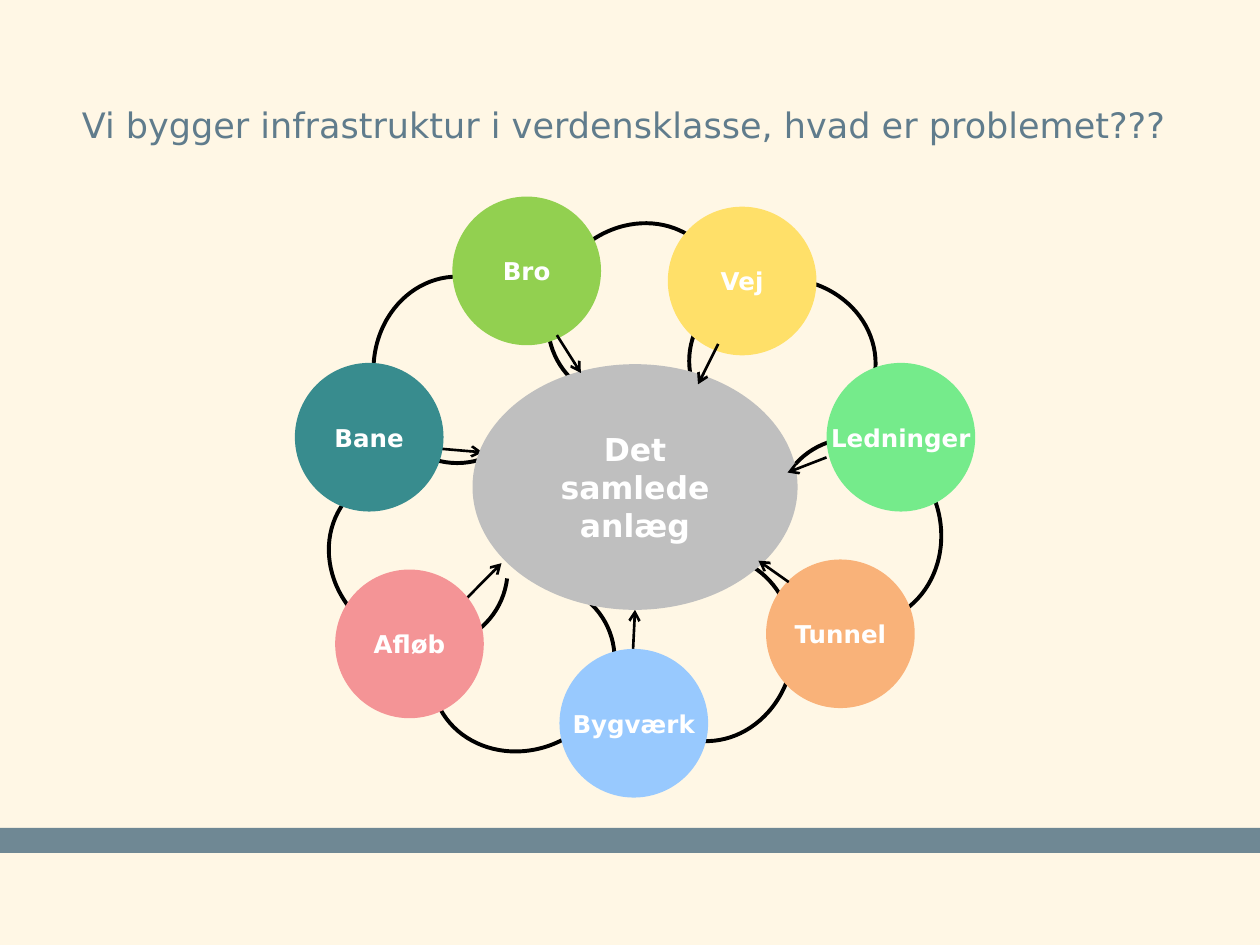
from dataclasses import dataclass

from lxml.etree import SubElement
from pptx import Presentation
from pptx.dml.color import RGBColor
from pptx.enum.shapes import MSO_CONNECTOR as Connector, MSO_SHAPE as Shape
from pptx.enum.text import MSO_ANCHOR as Anchor, PP_ALIGN as Align
from pptx.oxml.ns import qn
from pptx.util import Inches, Pt

COLUMNS, ROWS = 100, 75
FONT = "DejaVu Sans"
COLORS = {
    "background": "FFF7E5",
    "slate": "607C8C",
    "line": "000000",
    "label": "FFFFFF",
    "hub": "BFBFBF",
    "bridge": "92D050",
    "road": "FFE069",
    "cables": "75EB8B",
    "tunnel": "F9B279",
    "structure": "98C9FE",
    "drain": "F49496",
    "rail": "388C8E",
}
DISC = 11.8
ARC_WIDTH, ARC_HEIGHT = 14.8, 13.3
ARC_START, ARC_END = 152.6, 7.1
ADJUSTMENT_PER_DEGREE = 0.6


@dataclass(frozen=True)
class Discipline:
    """A disc, the arc leading on to its clockwise neighbour, and its arrow to the hub."""
    label: str
    color: str
    corner: tuple[float, float]
    arc_corner: tuple[float, float]
    arc_turn: float
    arrow_start: tuple[float, float]
    arrow_end: tuple[float, float]
    arrow_behind: bool = False


DISCIPLINES = [
    Discipline("Bro", "bridge", (35.9, 15.6), (43.1, 18.1), 314.9, (44.2, 26.6), (46.1, 29.6)),
    Discipline("Vej", "road", (53, 16.4), (54.7, 22.1), 4.1, (57, 27.3), (55.4, 30.5)),
    Discipline("Ledninger", "cables", (65.6, 28.8), (60.6, 35.5), 75.2, (65.6, 36.3), (62.5, 37.5)),
    Discipline("Tunnel", "tunnel", (60.8, 44.4), (48.9, 44.8), 100.6, (62.6, 46.2), (60.2, 44.5)),
    Discipline("Bygværk", "structure", (44.4, 51.5), (34.1, 46.2), 155.4, (49.7, 62.5), (50.4, 48.4), True),
    Discipline("Afløb", "drain", (26.6, 45.2), (25.8, 37.7), 219.8, (29.1, 55.5), (39.8, 44.7), True),
    Discipline("Bane", "rail", (23.4, 28.8), (28.9, 22.7), 270, (24.2, 34.7), (38.3, 35.9), True),
]

deck = Presentation()
deck.slide_width, deck.slide_height = Inches(10), Inches(7.5)
slide = deck.slides.add_slide(deck.slide_layouts[5])


def rgb(name: str) -> RGBColor:
    return RGBColor.from_string(COLORS[name])


def x(columns: float) -> int:
    return round(deck.slide_width * columns / COLUMNS)


def y(rows: float) -> int:
    return round(deck.slide_height * rows / ROWS)


def add_preset(kind, corner: tuple[float, float], width: float, height: float):
    preset = slide.shapes.add_shape(kind, x(corner[0]), y(corner[1]), x(width), y(height))
    preset.shadow.inherit = False
    return preset


def add_filled(kind, corner: tuple[float, float], width: float, height: float, color: str):
    filled = add_preset(kind, corner, width, height)
    filled.fill.solid()
    filled.fill.fore_color.rgb = rgb(color)
    filled.line.fill.background()
    return filled


def write(frame, text: str, size: float, color: str, bold: bool, align) -> None:
    frame.vertical_anchor = Anchor.MIDDLE
    paragraph = frame.paragraphs[0]
    paragraph.alignment = align
    run = paragraph.add_run()
    run.text = text
    run.font.name, run.font.size, run.font.bold = FONT, Pt(size), bold
    run.font.color.rgb = rgb(color)


def add_arc(discipline: Discipline) -> None:
    arc = add_preset(Shape.ARC, discipline.arc_corner, ARC_WIDTH, ARC_HEIGHT)
    arc.adjustments[0] = ARC_START * ADJUSTMENT_PER_DEGREE
    arc.adjustments[1] = ARC_END * ADJUSTMENT_PER_DEGREE
    arc.rotation = discipline.arc_turn
    arc.fill.background()
    arc.line.color.rgb = rgb("line")
    arc.line.width = Pt(2.25)


def add_arrows(behind: bool) -> None:
    for discipline in DISCIPLINES:
        if discipline.arrow_behind != behind:
            continue
        (x1, y1), (x2, y2) = discipline.arrow_start, discipline.arrow_end
        arrow = slide.shapes.add_connector(Connector.STRAIGHT, x(x1), y(y1), x(x2), y(y2))
        arrow.line.color.rgb = rgb("line")
        arrow.line.width = Pt(1.5)
        SubElement(arrow.line._get_or_add_ln(), qn("a:tailEnd"), type="arrow")
        SubElement(arrow._element.spPr, qn("a:effectLst"))


def add_disc(discipline: Discipline) -> None:
    disc = add_filled(Shape.OVAL, discipline.corner, DISC, DISC, discipline.color)
    frame = disc.text_frame
    frame.margin_left = frame.margin_right = 0
    frame.word_wrap = False
    write(frame, discipline.label, 14, "label", True, Align.CENTER)


def add_hub() -> None:
    hub = add_filled(Shape.OVAL, (37.5, 28.9), 25.8, 19.5, "hub")
    hub.text_frame.word_wrap = True
    write(hub.text_frame, "Det samlede anlæg", 18, "label", True, Align.CENTER)


def add_footer_band() -> None:
    band = add_filled(Shape.RECTANGLE, (0, 65.7), COLUMNS, 2, "slate")
    color = band._element.spPr.find(qn("a:solidFill")).find(qn("a:srgbClr"))
    SubElement(color, qn("a:alpha"), val="90000")


def set_title() -> None:
    title = slide.shapes.title
    title.left, title.top, title.width, title.height = x(5.5), y(7.9), x(89.8), y(3.9)
    title.text_frame.word_wrap = True
    write(title.text_frame, "Vi bygger infrastruktur i verdensklasse, hvad er problemet???",
          20, "slate", False, Align.LEFT)


def main() -> None:
    slide.background.fill.solid()
    slide.background.fill.fore_color.rgb = rgb("background")
    set_title()
    add_footer_band()
    for discipline in DISCIPLINES:
        add_arc(discipline)
    add_arrows(behind=True)
    for discipline in DISCIPLINES:
        add_disc(discipline)
    add_hub()
    add_arrows(behind=False)
    deck.save("out.pptx")


if __name__ == "__main__":
    main()
